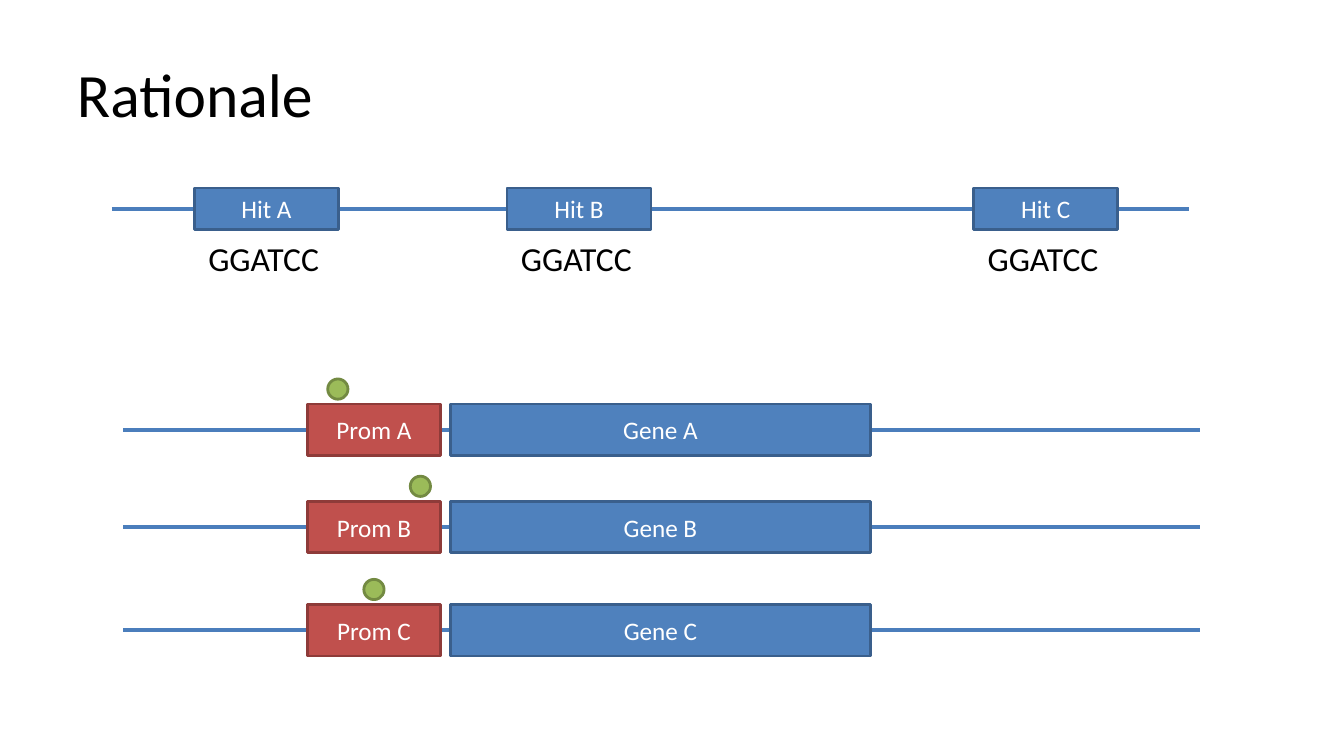
from dataclasses import dataclass

from lxml import etree
from pptx import Presentation
from pptx.dml.color import RGBColor
from pptx.enum import shapes, text
from pptx.oxml import ns
from pptx.util import Cm, Pt


@dataclass(frozen=True)
class Theme:
    """Colours as (fill, line) pairs, the font and type sizes."""
    font: str = "Calibri"
    title: int = 44
    sequence: int = 24
    label: int = 18
    strand: str = "4B7EBC"
    blue: tuple = ("4F81BD", "3A5F8C")
    red: tuple = ("C0504D", "8E3B39")
    green: tuple = ("9BBB59", "738A42")
    ink: str = "000000"
    paper: str = "FFFFFF"


THEME = Theme()


def write(sp, content, size, color):
    """Set and format the text of a shape."""
    p = sp.text_frame.paragraphs[0]
    p.text = content
    r = p.runs[0]
    r.font.name, r.font.size = THEME.font, Pt(size)
    r.font.color.rgb = RGBColor.from_string(color)


def add_strand(s, x, y, width):
    """Draw a horizontal DNA strand."""
    sp = s.shapes.add_connector(
        shapes.MSO_CONNECTOR.STRAIGHT, Cm(x), Cm(y), Cm(x + width), Cm(y))
    sp.line.color.rgb = RGBColor.from_string(THEME.strand)
    sp.line.width = Pt(3)
    etree.SubElement(sp._element.spPr, ns.qn("a:effectLst"))


def add_block(s, kind, x, y, width, height, colors, label=None):
    """Draw an outlined shape with an optional centred label."""
    sp = s.shapes.add_shape(kind, Cm(x), Cm(y), Cm(width), Cm(height))
    sp.shadow.inherit = False
    fill, line = colors
    sp.fill.solid()
    sp.fill.fore_color.rgb = RGBColor.from_string(fill)
    sp.line.color.rgb = RGBColor.from_string(line)
    sp.line.width = Pt(2)
    if label:
        write(sp, label, THEME.label, THEME.paper)
        sp.text_frame.vertical_anchor = text.MSO_ANCHOR.MIDDLE
        sp.text_frame.paragraphs[0].alignment = text.PP_ALIGN.CENTER


def add_title(s, x, y, width, height, content):
    """Place the slide title in its box."""
    sp = s.shapes.add_textbox(Cm(x), Cm(y), Cm(width), Cm(height))
    tf = sp.text_frame
    tf.word_wrap = True
    tf.vertical_anchor = text.MSO_ANCHOR.MIDDLE
    write(sp, content, THEME.title, THEME.ink)


def add_hits(s, x, y, width, hits, sequence):
    """Draw a strand with hits, each above its matching sequence."""
    bar_w, bar_h = 3.63, 1.04
    add_strand(s, x, y + bar_h / 2, width)
    for name, offset in hits:
        add_block(s, shapes.MSO_SHAPE.RECTANGLE, x + offset, y,
                  bar_w, bar_h, THEME.blue, f"Hit {name}")
        sp = s.shapes.add_textbox(
            Cm(x + offset + 0.1), Cm(y + 1.14), Cm(3.33), Cm(1.27))
        sp.text_frame.word_wrap = False
        sp.text_frame.auto_size = text.MSO_AUTO_SIZE.SHAPE_TO_FIT_TEXT
        write(sp, sequence, THEME.sequence, THEME.ink)


def add_gene(s, x, y, width, name, site):
    """Draw a strand with a promoter, its gene and a binding site above."""
    dot, bar_y, bar_h = 0.51, y + 0.63, 1.3
    rect = shapes.MSO_SHAPE.RECTANGLE
    add_strand(s, x, bar_y + bar_h / 2, width)
    add_block(s, rect, x + 8.25, bar_y, 10.59, bar_h, THEME.blue, f"Gene {name}")
    add_block(s, rect, x + 4.65, bar_y, 3.35, bar_h, THEME.red, f"Prom {name}")
    add_block(s, shapes.MSO_SHAPE.OVAL, x + site, y, dot, dot, THEME.green)


def main():
    """Build and save the slide."""
    prs = Presentation()
    prs.slide_width, prs.slide_height = Cm(33.87), Cm(19.05)
    s = prs.slides.add_slide(prs.slide_layouts[6])
    add_title(s, 1.69, 0.74, 30.48, 3.18, "Rationale")
    add_hits(s, 2.82, 4.74, 27.15,
             [("A", 2.08), ("B", 9.96), ("C", 21.72)], "GGATCC")
    for name, y, site in [("A", 9.55, 5.16), ("B", 12, 7.24), ("C", 14.6, 6.07)]:
        add_gene(s, 3.1, y, 27.13, name, site)
    prs.save("out.pptx")


if __name__ == "__main__":
    main()
